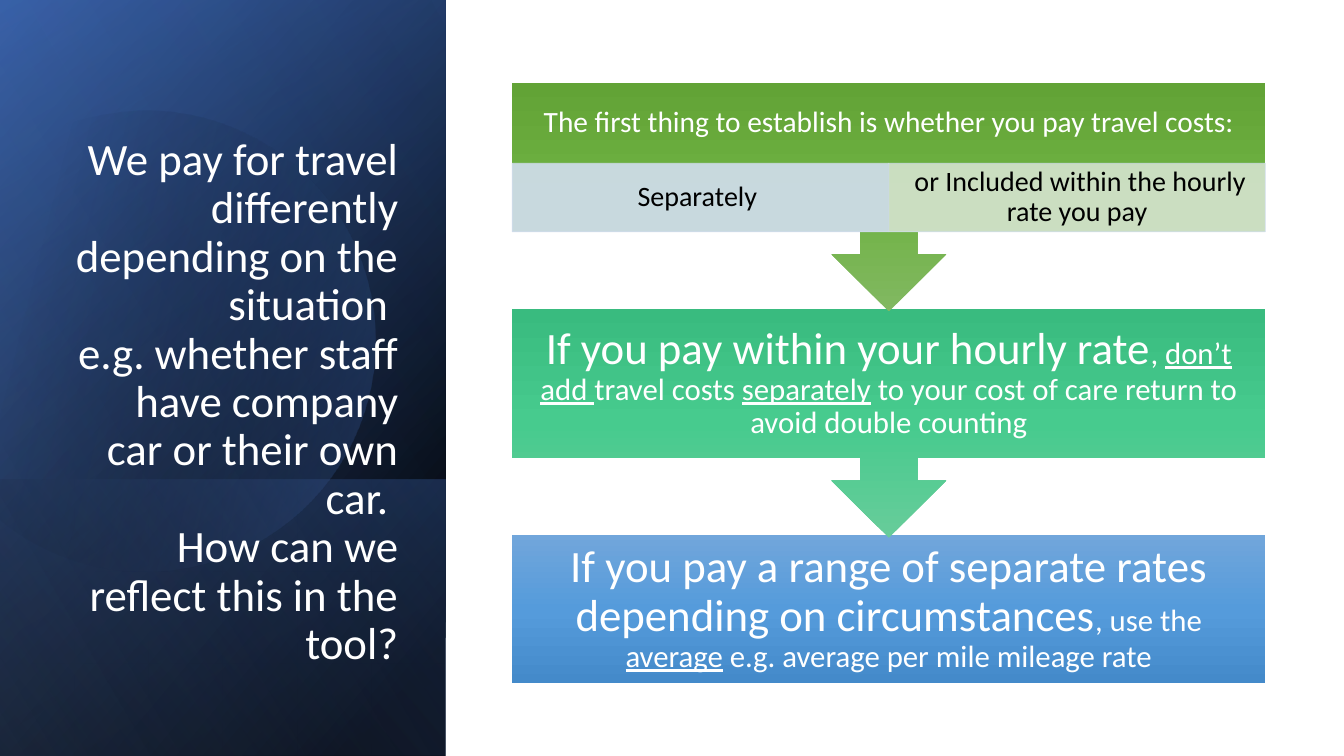
from math import cos, sin, radians

from lxml.etree import SubElement
from pptx import Presentation
from pptx.dml.color import RGBColor
from pptx.enum.shapes import MSO_SHAPE
from pptx.enum.text import MSO_ANCHOR, PP_ALIGN
from pptx.oxml.ns import qn
from pptx.util import Inches, Pt

HUES = {
    "white": "FFFFFF", "black": "000000", "navy": "2F5597", "blue": "4472C4",
    "pale": "8FAADC", "ice": "D2DEEF", "sage": "D5E3CF",
}
GREEN = ("81B861", "6FB242", "62A336")
MINT = ("67CC9A", "47CB8E", "39BB7F")
SKY = ("71A6DB", "559BDB", "448ACA")


def rgb(name):
    return RGBColor.from_string(HUES[name])


def fade(node, alpha):
    SubElement(node, qn("a:alpha")).set("val", str(alpha * 1000))


def blend(shape, stops, angle):
    """Fill with a gradient; each stop is (percent, hex, opacity)."""
    shape.shadow.inherit = False
    shape.line.fill.background()
    shape.fill.gradient()
    grad = shape._element.spPr.find(qn("a:gradFill"))
    for child in list(grad):
        grad.remove(child)
    items = SubElement(grad, qn("a:gsLst"))
    for spot, hue, alpha in stops:
        stop = SubElement(items, qn("a:gs"), pos=str(spot * 1000))
        color = SubElement(stop, qn("a:srgbClr"), val=hue)
        if alpha < 100:
            fade(color, alpha)
    SubElement(grad, qn("a:lin"), ang=str(angle * 60000), scaled="0")


def shade(shape, hues):
    blend(shape, [(n * 50, hue, 100) for n, hue in enumerate(hues)], 90)


def add(slide, kind, box):
    return slide.shapes.add_shape(kind, *map(Inches, box))


def write(frame, runs, hue, pad):
    """Fill a frame with runs of (text, size, underlined), centred."""
    frame.word_wrap = True
    frame.vertical_anchor = MSO_ANCHOR.MIDDLE
    frame.margin_left = frame.margin_right = Inches(pad[0])
    frame.margin_top = frame.margin_bottom = Inches(pad[1])
    para = frame.paragraphs[0]
    para.alignment = PP_ALIGN.CENTER
    para.line_spacing = 0.9
    para.font.name = "Calibri"
    para.font.color.rgb = rgb(hue)
    for text, size, under in runs:
        run = para.add_run()
        run.text = text
        run.font.size = Pt(size)
        if under:
            run.font.underline = True


def curve(start, one, two, end, count=24):
    """Points along a Bezier curve, without its start."""
    for n in range(1, count + 1):
        t = n / count
        parts = ((1 - t) ** 3, 3 * t * (1 - t) ** 2, 3 * t * t * (1 - t), t ** 3)
        yield tuple(sum(k * p[axis] for k, p in zip(parts, (start, one, two, end)))
                    for axis in (0, 1))


def disc(slide, box):
    """Tilted disc, cut off along the left side of the panel."""
    left, top = box[:2]
    tilt, mid = 16.1, (1.59, 3.35)
    arcs = [
        ((2.46, 1.12), (3.35, 1.77), (3.63, 2.75)),
        ((3.98, 3.97), (3.28, 5.23), (2.07, 5.58)),
        ((1.31, 5.8), (0.53, 5.61), (-0.03, 5.14)),
        [(-0.15, 5.03)], [(-0.15, 1.75)], [(0, 1.61)],
        ((0.23, 1.42), (0.5, 1.28), (0.8, 1.19)),
        ((1.03, 1.13), (1.26, 1.1), (1.49, 1.1)),
    ]
    dots = [(1.49, 1.1)]
    for arc in arcs:
        dots += arc if len(arc) == 1 else list(curve(dots[-1], *arc))
    # Turn the outline back, so that the shape's own rotation restores it
    c, s = cos(radians(tilt)), sin(radians(tilt))
    turned = []
    for x, y in dots:
        dx, dy = x - mid[0], y - mid[1]
        turned.append((Inches(left + mid[0] + dx * c - dy * s),
                       Inches(top + mid[1] + dx * s + dy * c)))
    form = slide.shapes.build_freeform(*turned[0])
    form.add_line_segments(turned[1:], close=True)
    shape = form.convert_to_shape()
    shape.rotation = 360 - tilt
    blend(shape, [(29, HUES["black"], 0), (100, HUES["blue"], 43)], 30)


def panel(slide, box):
    """Dark layered panel with the title on it."""
    left, top, wide, high = box

    def layer(tall, stops, angle):
        # A strip at the foot of the panel, turned by a quarter
        x = left + (wide - tall) / 2
        y = top + high - (tall + wide) / 2
        shape = add(slide, MSO_SHAPE.RECTANGLE, (x, y, tall, wide))
        shape.rotation = 90
        shape._element.spPr.xfrm.set("flipH", "1")
        blend(shape, [(p, HUES[h], a) for p, h, a in stops], angle)

    layer(high, [(8, "black", 100), (100, "navy", 100)], 50)
    layer(high, [(0, "black", 0), (99, "blue", 46)], 30)
    layer(2.74, [(2, "blue", 29), (100, "black", 30)], 130)
    disc(slide, box)
    layer(high, [(0, "black", 0), (99, "pale", 11)], 120)

    # Title, moved in front of the layers
    title = slide.shapes.title
    title.left, title.top = Inches(left + 0.64), Inches(top + 1.84)
    title.width, title.height = Inches(3.41), Inches(4.85)
    slide.shapes._spTree.append(title._element)
    frame = title.text_frame
    frame.text = ("We pay for travel differently depending on the situation \v"
                  "e.g. whether staff have company car or their own car. \v"
                  "How can we reflect this in the tool?")
    frame.word_wrap = True
    frame.vertical_anchor = MSO_ANCHOR.BOTTOM
    para = frame.paragraphs[0]
    para.alignment = PP_ALIGN.RIGHT
    para.line_spacing = 0.9
    para.font.name = "Calibri"
    para.font.size = Pt(32)
    para.font.color.rgb = rgb("white")


def flow(slide, box):
    """Three steps, the first two pointing down to the next."""
    left, top, wide, high = box
    body, tall = 1.47, 2.27
    step = (high - body) / 2
    head = 0.8

    def callout(row, hues, runs, deep, pad):
        y = top + row * step
        shape = add(slide, MSO_SHAPE.UP_ARROW_CALLOUT, (left, y, wide, tall))
        shape.rotation = 180
        shade(shape, hues)
        label = slide.shapes.add_textbox(*map(Inches, (left, y, wide, deep)))
        write(label.text_frame, runs, "white", (pad, pad))

    # Last step
    last = add(slide, MSO_SHAPE.RECTANGLE, (left, top + 2 * step, wide, body))
    shade(last, SKY)
    write(last.text_frame, [
        ("If you pay a range of separate rates depending on circumstances", 32, False),
        (", use the ", 22, False), ("average", 22, True),
        (" e.g. average per mile mileage rate", 22, False),
    ], "white", (0.25, 0.25))

    # Steps with arrows
    callout(1, MINT, [
        ("If you pay within your hourly rate", 32, False), (", ", 22, False),
        ("don’t add ", 22, True), ("travel costs ", 22, False),
        ("separately", 22, True),
        (" to your cost of care return to avoid double counting", 22, False),
    ], body, 0.25)
    callout(0, GREEN, [
        ("The first thing to establish is whether you pay travel costs:", 21, False),
    ], head, 0.16)

    # Two choices under the first heading
    choices = [("Separately ", "ice"),
               (" or Included within the hourly rate you pay", "sage")]
    for n, (text, hue) in enumerate(choices):
        cell = add(slide, MSO_SHAPE.RECTANGLE,
                   (left + n * wide / 2, top + head, wide / 2, 0.68))
        cell.shadow.inherit = False
        cell.fill.solid()
        cell.fill.fore_color.rgb = rgb(hue)
        cell.line.color.rgb = rgb("ice")
        cell.line.width = Pt(0.5)
        for color in cell._element.spPr.iter(qn("a:srgbClr")):
            fade(color, 90)
        write(cell.text_frame, [(text, 20, False)], "black", (0.16, 0.03))


def main():
    deck = Presentation()
    deck.slide_width, deck.slide_height = Inches(13.33), Inches(7.5)
    slide = deck.slides.add_slide(deck.slide_layouts[5])
    panel(slide, (0, 0, 4.42, 7.5))
    flow(slide, (5.08, 0.82, 7.47, 5.96))
    deck.save("out.pptx")


if __name__ == "__main__":
    main()
